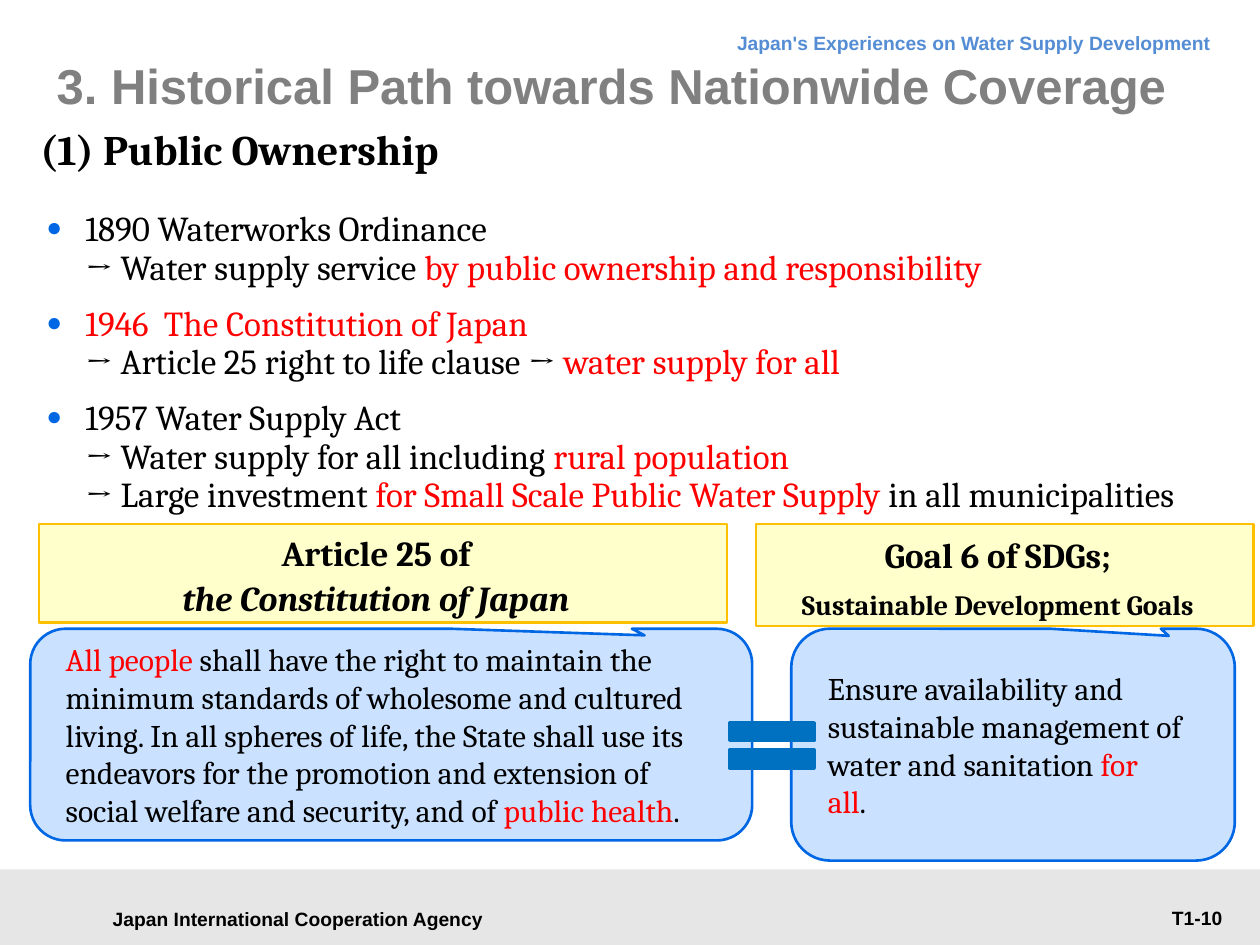
from lxml import etree
from pptx import Presentation
from pptx.dml.color import RGBColor
from pptx.enum.shapes import MSO_SHAPE as SHAPE
from pptx.enum.text import MSO_ANCHOR as ANCHOR, PP_ALIGN as ALIGN
from pptx.oxml.ns import qn
from pptx.util import Inches, Pt

BLACK = RGBColor(0x00, 0x00, 0x00)
RED = RGBColor(0xFF, 0x00, 0x00)
GRAY = RGBColor(0x80, 0x80, 0x80)
BAND = RGBColor(0xE6, 0xE6, 0xE6)
HEADER_BLUE = RGBColor(0x54, 0x8D, 0xD4)
EDGE_BLUE = RGBColor(0x00, 0x67, 0xE4)
PALE_BLUE = RGBColor(0xCA, 0xE2, 0xFF)
EQUAL_BLUE = RGBColor(0x00, 0x70, 0xC0)
CREAM = RGBColor(0xFF, 0xFF, 0xCC)
GOLD = RGBColor(0xFF, 0xC0, 0x00)

SMALL = dict(name="Arial", size=Pt(11), bold=True)
TITLE = dict(name="Arial", size=Pt(28), bold=True)
SECTION = dict(name="Cambria", size=Pt(24), bold=True)
BODY = dict(name="Cambria", size=Pt(20))
QUOTE = dict(name="Cambria", size=Pt(18))
LABEL = dict(name="Cambria", size=Pt(20), bold=True)

DEFAULT_INSETS = (0.1, 0.05, 0.1, 0.05)
LABEL_INSETS = (0.24, 0.04, 0.35, 0.04)
CALLOUT_INSETS = (0.2, 0, 0.12, 0)
CALLOUT_ADJUSTMENTS = (0.351, -0.469, 0.167)

HISTORY = [
    [("1890 Waterworks Ordinance\n→ Water supply service ", BLACK),
     ("by public ownership and responsibility", RED)],
    [("1946  The Constitution of Japan\n", RED),
     ("→ Article 25 right to life clause → ", BLACK),
     ("water supply for all", RED)],
    [("1957 Water Supply Act\n→ Water supply for all including ", BLACK),
     ("rural population\n", RED),
     ("→ Large investment ", BLACK),
     ("for Small Scale Public Water Supply ", RED),
     ("in all municipalities", BLACK)],
]
ARTICLE = [
    ("All people ", RED),
    ("shall have the right to maintain the minimum standards of wholesome "
     "and cultured living. In all spheres of life, the State shall use its "
     "endeavors for the promotion and extension of social welfare and "
     "security, and of", BLACK),
    (" public health", RED),
    (".", BLACK),
]
GOAL = [
    ("Ensure availability and sustainable management of water and "
     "sanitation ", BLACK),
    ("for\nall", RED),
    (".", BLACK),
]


def write(paragraph, pieces, style):
    """Add coloured runs; a newline becomes a line break."""
    for text, color in pieces:
        for index, line in enumerate(text.split("\n")):
            if index:
                paragraph.add_line_break()
            if line:
                run = paragraph.add_run()
                run.text = line
                for key, value in style.items():
                    setattr(run.font, key, value)
                run.font.color.rgb = color


def prepare_frame(shape, insets=DEFAULT_INSETS, anchor=ANCHOR.TOP):
    frame = shape.text_frame
    left, top, right, bottom = map(Inches, insets)
    settings = dict(word_wrap=True, vertical_anchor=anchor,
                    margin_left=left, margin_top=top,
                    margin_right=right, margin_bottom=bottom)
    for key, value in settings.items():
        setattr(frame, key, value)
    return frame


def add_text(slide, box, pieces, style, align=ALIGN.LEFT, **frame_options):
    textbox = slide.shapes.add_textbox(*map(Inches, box))
    paragraph = prepare_frame(textbox, **frame_options).paragraphs[0]
    paragraph.alignment = align
    write(paragraph, pieces, style)
    return paragraph


def add_panel(slide, kind, box, fill, edge=None, width=1.5):
    panel = slide.shapes.add_shape(kind, *map(Inches, box))
    panel.shadow.inherit = False
    panel.fill.solid()
    panel.fill.fore_color.rgb = fill
    if edge is None:
        panel.line.fill.background()
    else:
        panel.line.color.rgb = edge
        panel.line.width = Pt(width)
    return panel


def add_bullet(paragraph):
    properties = paragraph._p.get_or_add_pPr()
    properties.set("marL", str(Inches(0.37)))
    properties.set("indent", str(Inches(-0.31)))
    color = etree.SubElement(properties, qn("a:buClr"))
    etree.SubElement(color, qn("a:srgbClr"), val=str(EDGE_BLUE))
    etree.SubElement(properties, qn("a:buSzPct"), val="75000")
    etree.SubElement(properties, qn("a:buFont"), typeface="Arial")
    etree.SubElement(properties, qn("a:buChar"), char="●")


def add_footer(slide, box):
    left, top, width, height = box
    add_panel(slide, SHAPE.RECTANGLE, box, BAND)
    add_text(slide, (left + 0.71, top + 0.22, 3.31, 0.34),
             [("Japan International Cooperation Agency", BLACK)], SMALL,
             ALIGN.CENTER, anchor=ANCHOR.MIDDLE)
    add_text(slide, (left + width - 1.77, top + 0.24, 1.57, 0.29),
             [("T1-10", BLACK)], SMALL, ALIGN.RIGHT)


def add_heading(slide, box):
    left, top, width, height = box
    header = add_text(slide, (left + 2.44, top, 6.99, 0.38),
                      [("Japan's Experiences on Water Supply Development",
                        HEADER_BLUE)], SMALL, ALIGN.RIGHT)
    header.line_spacing = Pt(18)
    add_text(slide, (left + 0.11, top + 0.15, 8.98, 0.79),
             [("3. Historical Path towards Nationwide Coverage", GRAY)],
             TITLE, insets=(0.06, 0, 0, 0), anchor=ANCHOR.MIDDLE)
    add_text(slide, (left, top + 0.85, width, 0.4),
             [("(1) Public Ownership", BLACK)], SECTION,
             insets=(0.04, 0, 0, 0))


def add_history(slide, box):
    frame = prepare_frame(slide.shapes.add_textbox(*map(Inches, box)))
    for index, pieces in enumerate(HISTORY):
        paragraph = frame.add_paragraph() if index else frame.paragraphs[0]
        add_bullet(paragraph)
        paragraph.line_spacing = Pt(22)
        if index:
            paragraph.space_before = Pt(10)
        write(paragraph, pieces, BODY)


def add_provision(slide, callout_box, label_box, pieces, label_lines):
    """Callout with the wording, under a label naming its origin."""
    callout = add_panel(slide, SHAPE.ROUNDED_RECTANGULAR_CALLOUT, callout_box,
                        PALE_BLUE, EDGE_BLUE)
    for index, value in enumerate(CALLOUT_ADJUSTMENTS):
        callout.adjustments[index] = value
    wording = prepare_frame(callout, CALLOUT_INSETS, ANCHOR.MIDDLE).paragraphs[0]
    wording.alignment = ALIGN.LEFT
    write(wording, pieces, QUOTE)

    label = add_panel(slide, SHAPE.RECTANGLE, label_box, CREAM, GOLD)
    frame = prepare_frame(label, LABEL_INSETS, ANCHOR.MIDDLE)
    for index, (text, changes) in enumerate(label_lines):
        paragraph = frame.add_paragraph() if index else frame.paragraphs[0]
        paragraph.alignment = ALIGN.CENTER
        paragraph.line_spacing = Pt(26)
        write(paragraph, [(text, BLACK)], {**LABEL, **changes})


def main():
    deck = Presentation()
    deck.slide_width, deck.slide_height = Inches(10), Inches(7.5)
    slide = deck.slides.add_slide(deck.slide_layouts[6])

    add_footer(slide, (0, 6.9, 10, 0.6))
    add_heading(slide, (0.28, 0.13, 9.45, 1.25))
    add_history(slide, (0.21, 1.62, 9.59, 2.54))

    # Constitution and SDG provisions, joined by an equals sign
    add_provision(slide, (0.24, 4.99, 5.73, 1.68), (0.31, 4.16, 5.46, 0.78),
                  ARTICLE, [("Article 25 of", {}),
                            ("the Constitution of Japan", dict(italic=True))])
    add_provision(slide, (6.28, 4.99, 3.52, 1.84), (6, 4.16, 3.95, 0.81),
                  GOAL, [("Goal 6 of SDGs;", {}),
                         ("Sustainable Development Goals", dict(size=Pt(16)))])
    add_panel(slide, SHAPE.MATH_EQUAL, (5.67, 5.61, 0.91, 0.61),
              EQUAL_BLUE, EQUAL_BLUE, 2)

    deck.save("out.pptx")


if __name__ == "__main__":
    main()
